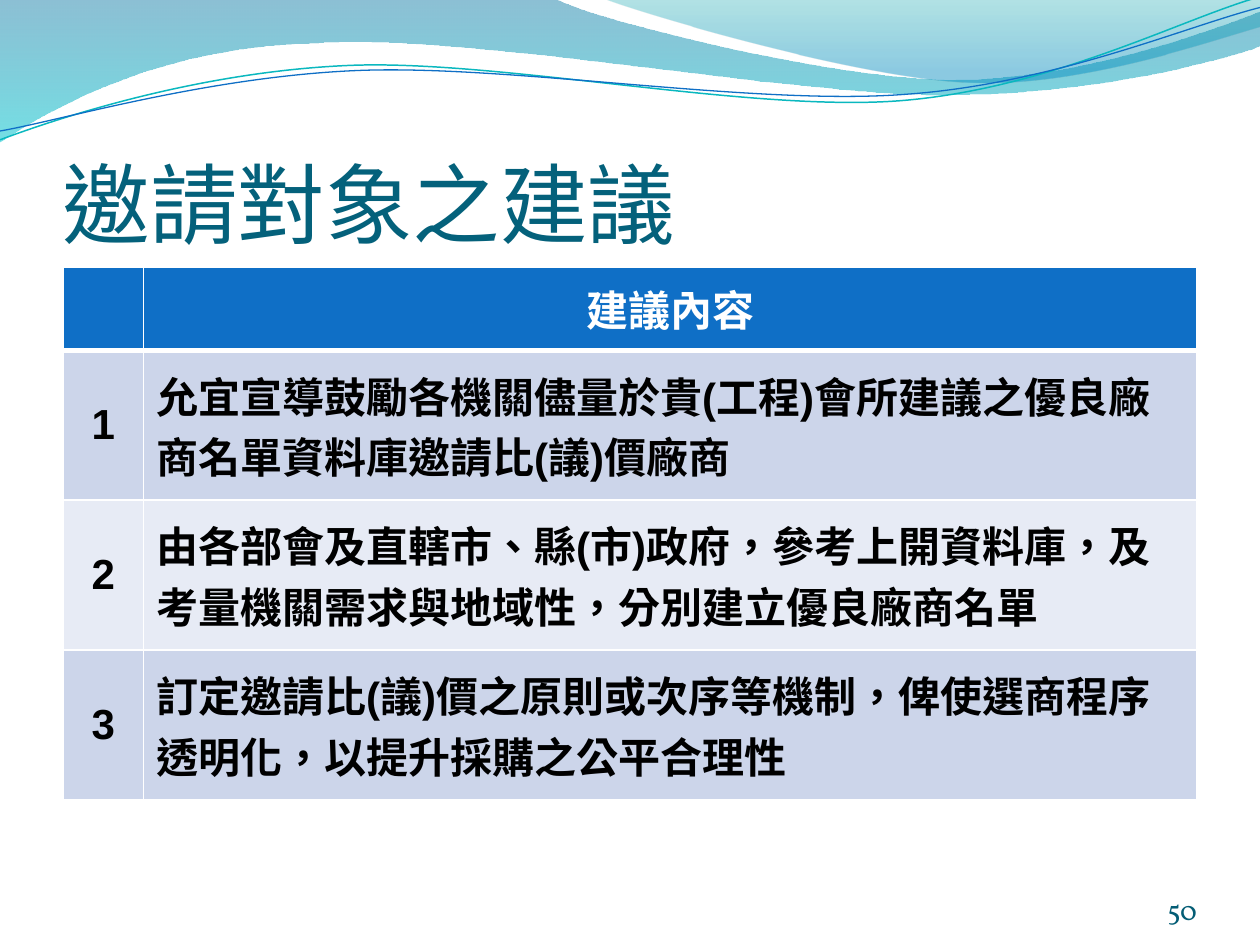
import math

import pptx
import pptx.dml.color
import pptx.enum.lang
import pptx.enum.text
import pptx.oxml
import pptx.oxml.ns
import pptx.util
from pptx.util import Inches

ALIGN = pptx.enum.text.PP_ALIGN
ANCHOR = pptx.enum.text.MSO_ANCHOR
CHINESE = pptx.enum.lang.MSO_LANGUAGE_ID.TRADITIONAL_CHINESE
NS = pptx.oxml.ns.nsdecls("a")
COLORS = {
    "title": "04617B", "number": "045D75", "header": "0F6FC6",
    "odd": "CCD5EA", "even": "E7EBF5", "white": "FFFFFF", "black": "000000",
    "teal_line": "0AB8BF", "blue_line": "0F6FC6",
    "deep_blue": "0074A1", "aqua": "00C6CF", "teal": "00A1A9", "sky": "008BBF",
}
UNITS = 1000  # freeform units per inch
TILT = 357.3  # rotation of the two thin waves, in degrees

# Each wave is a start point, then (x, y) lines and six-number Bezier curves.
BROAD_WAVE = [
    (0, 0), (4.4, -0.01), (4.76, 0.17, 6.64, 0.63, 7.58, 0.63),
    (8.53, 0.63, 9.58, 0.26, 10, 0.09), (10.01, 0.36),
    (9.83, 0.44, 8.7, 0.76, 7.46, 0.75), (6.22, 0.75, 3.82, 0.28, 2.57, 0.34),
    (1.29, 0.36, 0.46, 0.83, -0.01, 1.13), (0, 0)]
RIGHT_WAVE = [
    (4.79, -0.01), (5.09, 0.11, 6.82, 0.62, 7.69, 0.65),
    (8.56, 0.69, 9.61, 0.32, 10, 0.21), (10, 0), (4.79, -0.01)]
TEAL_WAVE = [
    (0, 1.11), (0.48, 0.93, 1.58, 0.57, 2.77, 0.52),
    (3.95, 0.47, 5.93, 0.89, 7.13, 0.8), (8.33, 0.71, 9.38, 0.15, 9.98, -0.02)]
BLUE_WAVE = [
    (0, 1.04), (0.47, 0.96, 1.64, 0.61, 2.83, 0.56),
    (4.03, 0.51, 5.97, 0.84, 7.17, 0.75), (8.36, 0.67, 9.41, 0.21, 10, 0.06)]

ADVICE = [
    "允宜宣導鼓勵各機關儘量於貴(工程)會所建議之優良廠商名單資料庫邀請比(議)價廠商",
    "由各部會及直轄市、縣(市)政府，參考上開資料庫，及考量機關需求與地域性，分別建立優良廠商名單",
    "訂定邀請比(議)價之原則或次序等機制，俾使選商程序透明化，以提升採購之公平合理性",
]


def rgb(name):
    return pptx.dml.color.RGBColor.from_string(COLORS[name])


def unrotate(outline, center, degrees):
    """Turn the outline back, so that rotating its shape puts it in place."""
    cx, cy = center
    cos, sin = math.cos(math.radians(-degrees)), math.sin(math.radians(-degrees))
    return [[value for x, y in zip(segment[::2], segment[1::2])
             for value in (cx + (x - cx) * cos - (y - cy) * sin,
                           cy + (x - cx) * sin + (y - cy) * cos)]
            for segment in outline]


def add_wave(s, outline, close):
    """Lay out every vertex as a line, then join each triple into a curve."""
    points = [(x * UNITS, y * UNITS) for segment in outline
              for x, y in zip(segment[::2], segment[1::2])]
    builder = s.shapes.build_freeform(*points[0], scale=Inches(1) / UNITS)
    builder.add_line_segments(points[1:], close=close)
    sp = builder.convert_to_shape()
    sp.shadow.inherit = False
    lines = iter(list(sp._element.iter(pptx.oxml.ns.qn("a:lnTo"))))
    for segment in outline[1:]:
        first = next(lines)
        if len(segment) == 2:
            continue
        curve = pptx.oxml.parse_xml(f"<a:cubicBezTo {NS}/>")
        first.addprevious(curve)
        for line in (first, next(lines), next(lines)):
            curve.append(line[0])
            line.getparent().remove(line)
    return sp


def add_filled_wave(s, outline, stops):
    """Stops are (position, colour name, opacity in percent), top to bottom."""
    sp = add_wave(s, outline, True)
    sp.line.fill.background()
    sp.fill.gradient()
    sp.fill.gradient_angle = 270
    for stop, (position, color, _) in zip(sp.fill.gradient_stops, stops):
        stop.position = position
        stop.color.rgb = rgb(color)
    colors = list(sp._element.spPr.iter(pptx.oxml.ns.qn("a:srgbClr")))
    for element, (_, _, opacity) in zip(colors, stops):
        element.append(pptx.oxml.parse_xml(f'<a:alpha {NS} val="{opacity * 1000}"/>'))


def add_line_wave(s, outline, center, color, width):
    sp = add_wave(s, unrotate(outline, center, TILT), False)
    sp.rotation = TILT
    sp.fill.background()
    sp.line.color.rgb = rgb(color)
    sp.line.width = pptx.util.Pt(width)


def write(p, text, font, size, color, bold=False, align=ALIGN.LEFT):
    p.text = text
    p.alignment = align
    p.font.name = font
    p.font.size = pptx.util.Pt(size)
    p.font.bold = bold
    p.font.color.rgb = rgb(color)
    for r in p.runs:
        r.font.language_id = CHINESE


def add_text(s, box, text, font, size, color, align=ALIGN.LEFT, inset=0):
    tf = s.shapes.add_textbox(*map(Inches, box)).text_frame
    tf.word_wrap = True
    tf.vertical_anchor = ANCHOR.BOTTOM
    tf.margin_left = tf.margin_right = tf.margin_bottom = 0
    tf.margin_top = Inches(inset)
    write(tf.paragraphs[0], text, font, size, color, align=align)


def set_borders(cell, top, bottom):
    """Draw white rules of the given widths in points; the sides are 1 point."""
    tcPr = cell._tc.get_or_add_tcPr()
    for i, (side, width) in enumerate(zip("LRTB", (1, 1, top, bottom))):
        tcPr.insert(i, pptx.oxml.parse_xml(
            f'<a:ln{side} {NS} w="{pptx.util.Pt(width)}"><a:solidFill>'
            f'<a:srgbClr val="{COLORS["white"]}"/></a:solidFill></a:ln{side}>'))


def fill_cell(cell, text, fill, color, align, top=1, bottom=1):
    cell.fill.solid()
    cell.fill.fore_color.rgb = rgb(fill)
    set_borders(cell, top, bottom)
    cell.vertical_anchor = ANCHOR.MIDDLE
    write(cell.text_frame.paragraphs[0], text, "Arial", 24, color, True, align)


def add_advice_table(s):
    table = s.shapes.add_table(len(ADVICE) + 1, 2, Inches(0.5), Inches(2.12),
                               Inches(9), Inches(4.23)).table
    for column, width in zip(table.columns, (0.64, 8.36)):
        column.width = Inches(width)
    for i, row in enumerate(table.rows):
        row.height = Inches(1.19 if i else 0.66)
    for column, text in enumerate(("", "建議內容")):
        fill_cell(table.cell(0, column), text, "header", "white", ALIGN.CENTER, bottom=3)
    for i, text in enumerate(ADVICE, 1):
        fill = "odd" if i % 2 else "even"
        top = 3 if i == 1 else 1
        fill_cell(table.cell(i, 0), str(i), fill, "black", ALIGN.CENTER, top)
        fill_cell(table.cell(i, 1), text, fill, "black", ALIGN.LEFT, top)


def main():
    prs = pptx.Presentation()
    prs.slide_width, prs.slide_height = Inches(10), Inches(7.5)
    s = prs.slides.add_slide(prs.slide_layouts[6])
    add_filled_wave(s, BROAD_WAVE, [(0, "deep_blue", 45), (1, "aqua", 55)])
    add_filled_wave(s, RIGHT_WAVE, [(0, "teal", 30), (0.8, "sky", 45)])
    add_line_wave(s, TEAL_WAVE, (4.99, 0.58), "teal_line", 0.85)
    add_line_wave(s, BLUE_WAVE, (5, 0.59), "blue_line", 0.75)
    add_text(s, (0.5, 0.77, 9, 1.25), "邀請對象之建議", "Calibri", 50, "title", inset=0.05)
    add_advice_table(s)
    add_text(s, (8.67, 6.95, 0.83, 0.4), "50", "Vollkorn", 16, "number", ALIGN.RIGHT)
    prs.save("out.pptx")


if __name__ == "__main__":
    main()
